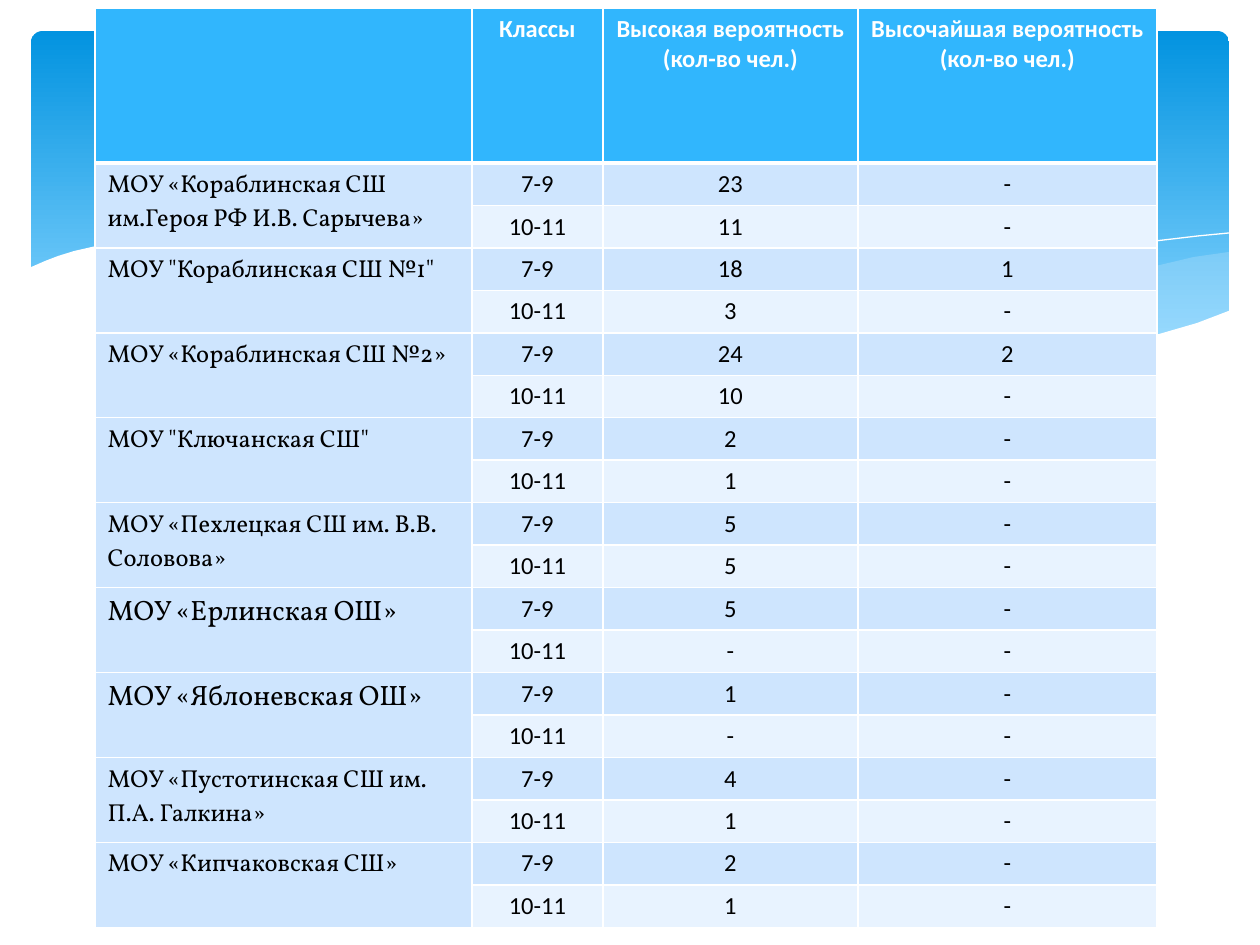
from lxml import etree
from pptx import Presentation, util as u
from pptx.dml.color import RGBColor
from pptx.enum import shapes, text
from pptx.oxml.ns import qn

PX = 914400 / 126
WHITE = "FFFFFF"
HEADER_FILL, ODD_FILL, EVEN_FILL = "31B6FD", "CEE5FE", "E8F3FF"
COLUMN_WIDTHS = [377, 131, 255, 299]
HEADER_HEIGHT, ROW_HEIGHT = 155, 42
HEADINGS = ["", "Классы", "Высокая вероятность\n(кол-во чел.)",
            "Высочайшая вероятность\n(кол-во чел.)"]
GRADES = ["7-9", "10-11"]

SCHOOLS = [
    ("МОУ «Кораблинская СШ им.Героя РФ И.В. Сарычева»", 14, ["23", "11"], ["-", "-"]),
    ('МОУ "Кораблинская СШ №1"', 14, ["18", "3"], ["1", "-"]),
    ("МОУ «Кораблинская СШ №2»", 14, ["24", "10"], ["2", "-"]),
    ('МОУ "Ключанская СШ"', 14, ["2", "1"], ["-", "-"]),
    ("МОУ «Пехлецкая СШ им. В.В. Соловова»", 14, ["5", "5"], ["-", "-"]),
    ("МОУ «Ерлинская ОШ»", 16, ["5", "-"], ["-", "-"]),
    ("МОУ «Яблоневская ОШ»", 16, ["1", "-"], ["-", "-"]),
    ("МОУ «Пустотинская СШ им. П.А. Галкина»", 14, ["4", "1"], ["-", "-"]),
    ("МОУ «Кипчаковская СШ»", 14, ["2", "1"], ["-", "-"]),
]

RIGHT_WAVE = [
    (1229, 252), (1194, 257), (1160, 265), (1123, 272), (1085, 281), (1014, 299),
    (949, 312), (890, 324), (833, 334), (871, 339), (922, 345), (969, 349),
    (1026, 350), (1076, 348), (1120, 343), (1160, 334), (1196, 324), (1229, 311),
]
MIDDLE_WAVE = [
    (1125, 344), (1055, 334), (977, 320), (890, 302), (793, 280), (717, 262),
    (648, 249), (586, 241), (529, 236), (479, 233), (433, 234), (394, 237),
    (360, 241), (431, 251), (509, 266), (566, 280), (668, 302), (757, 321),
    (838, 335), (910, 345), (974, 349), (1031, 350), (1080, 349),
]
FALLING_LINE = [
    (389, 246), (433, 239), (505, 236), (591, 238), (672, 244), (766, 257),
    (876, 276), (958, 294), (1047, 316), (1143, 343),
]
RISING_LINE = [
    (772, 324), (847, 304), (942, 281), (1016, 265), (1091, 251), (1147, 242),
    (1198, 236), (1229, 233),
]
WHITE_WAVE = [
    (1231, 310), (1197, 323), (1159, 334), (1118, 341), (1071, 346), (1019, 349),
    (959, 346), (892, 340), (816, 330), (730, 315), (634, 294), (563, 277),
    (493, 261), (428, 248), (368, 239), (315, 234), (266, 232), (223, 232),
    (184, 233), (150, 236), (120, 241), (96, 246), (74, 251), (58, 256),
    (45, 261), (29, 268), (29, 415), (1231, 415),
]


def px(length):
    return u.Emu(round(length * PX))


def rgb(value):
    return RGBColor.from_string(value)


def add_banner(slide):
    banner = slide.shapes.add_shape(shapes.MSO_SHAPE.ROUNDED_RECTANGLE,
                                    px(31), px(31), px(1198), px(340))
    banner.adjustments[0] = 0.034
    banner.shadow.inherit = False
    banner.line.fill.background()
    banner.fill.gradient()
    banner.fill.gradient_angle = 270
    stops = zip(banner.fill.gradient_stops, [(0, "0293E0"), (0.9, "83D3FE")])
    for stop, (position, color) in stops:
        stop.position = position
        stop.color.rgb = rgb(color)


def add_outline(slide, points, fill=None, opacity=100, line=None):
    builder = slide.shapes.build_freeform(*points[0], scale=PX)
    builder.add_line_segments(points[1:], close=fill is not None)
    outline = builder.convert_to_shape()
    outline.shadow.inherit = False
    if fill:
        outline.fill.solid()
        outline.fill.fore_color.rgb = rgb(fill)
        if opacity < 100:
            tint = outline.fill._xPr.find(".//" + qn("a:srgbClr"))
            etree.SubElement(tint, qn("a:alpha"), val=str(opacity * 1000))
    else:
        outline.fill.background()
    if line:
        outline.line.color.rgb = rgb(line)
        outline.line.width = 0
    else:
        outline.line.fill.background()


def write(cell, content, font="Calibri", size=14, color="000000", bold=False,
          align=text.PP_ALIGN.CENTER):
    cell.text = content
    for paragraph in cell.text_frame.paragraphs:
        paragraph.alignment = align
        paragraph.font.size = u.Pt(size)
        for run in paragraph.runs:
            run.font.name = font
            run.font.size = u.Pt(size)
            run.font.bold = bold
            run.font.color.rgb = rgb(color)


def paint(cell, fill, top=1, bottom=1):
    properties = cell._tc.get_or_add_tcPr()
    for side, width in {"L": 1, "R": 1, "T": top, "B": bottom}.items():
        border = etree.SubElement(properties, qn("a:ln" + side), w=str(u.Pt(width)))
        solid = etree.SubElement(border, qn("a:solidFill"))
        etree.SubElement(solid, qn("a:srgbClr"), val=WHITE)
    cell.fill.solid()
    cell.fill.fore_color.rgb = rgb(fill)


def add_school(table, first_row, name, name_size, high, highest):
    for offset, values in enumerate(zip(GRADES, high, highest)):
        row = first_row + offset
        fill = EVEN_FILL if offset else ODD_FILL
        paint(table.cell(row, 0), ODD_FILL, top=3 if row == 1 else 1)
        for column, value in enumerate(values, start=1):
            cell = table.cell(row, column)
            paint(cell, fill, top=3 if row == 1 else 1)
            write(cell, value)
    name_cell = table.cell(first_row, 0)
    name_cell.merge(table.cell(first_row + 1, 0))
    write(name_cell, name, font="Vollkorn", size=name_size, align=text.PP_ALIGN.LEFT)


def add_results(slide):
    row_count = 1 + len(SCHOOLS) * len(GRADES)
    height = HEADER_HEIGHT + ROW_HEIGHT * (row_count - 1)
    table = slide.shapes.add_table(row_count, len(HEADINGS), px(95), px(8),
                                   px(sum(COLUMN_WIDTHS)), px(height)).table
    for column, width in zip(table.columns, COLUMN_WIDTHS):
        column.width = px(width)
    for index, row in enumerate(table.rows):
        row.height = px(ROW_HEIGHT if index else HEADER_HEIGHT)
    for column, heading in enumerate(HEADINGS):
        cell = table.cell(0, column)
        paint(cell, HEADER_FILL, bottom=3)
        write(cell, heading, color=WHITE, bold=True)
    for index, school in enumerate(SCHOOLS):
        add_school(table, 1 + index * len(GRADES), *school)


def main():
    presentation = Presentation()
    presentation.slide_width, presentation.slide_height = px(1260), px(945)
    slide = presentation.slides.add_slide(presentation.slide_layouts[6])
    add_banner(slide)
    add_outline(slide, RIGHT_WAVE, fill="C6E7FC", opacity=29)
    add_outline(slide, MIDDLE_WAVE, fill="C6E7FC", opacity=40)
    add_outline(slide, FALLING_LINE, line=WHITE)
    add_outline(slide, RISING_LINE, line=WHITE)
    add_outline(slide, WHITE_WAVE, fill=WHITE)
    add_results(slide)
    presentation.save("out.pptx")


if __name__ == "__main__":
    main()
